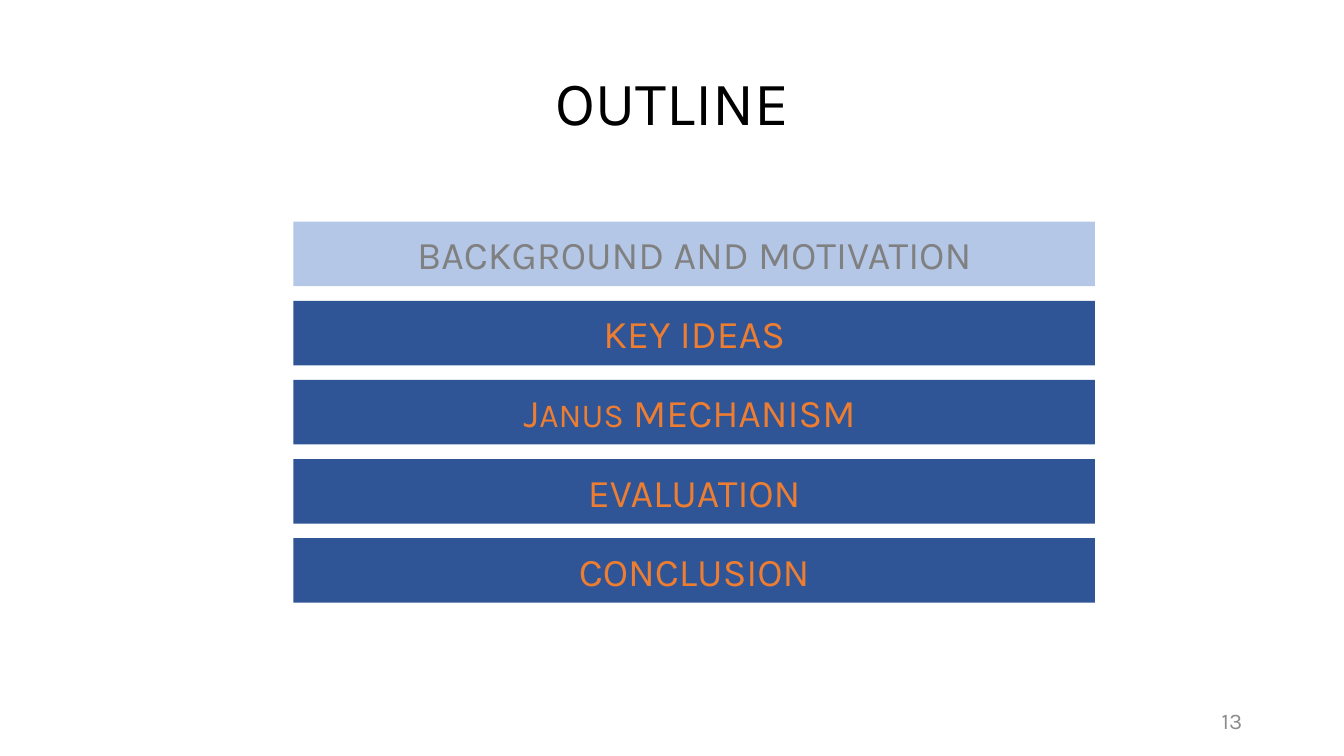
from pptx import Presentation
from pptx.dml.color import RGBColor
from pptx.enum.shapes import MSO_SHAPE
from pptx.enum.text import MSO_ANCHOR, PP_ALIGN
from pptx.util import Inches, Pt

RECTANGLE = MSO_SHAPE.RECTANGLE
MIDDLE = MSO_ANCHOR.MIDDLE
CENTER, RIGHT = PP_ALIGN.CENTER, PP_ALIGN.RIGHT

DONE = ("B4C7E7", "808080")
AHEAD = ("2F5597", "ED7D31")
SECTIONS = [
    ([("BACKGROUND AND MOTIVATION", 28)], DONE),
    ([("KEY IDEAS", 28)], AHEAD),
    ([("J", 28), ("ANUS", 24), (" MECHANISM ", 28)], AHEAD),
    ([("EVALUATION", 28)], AHEAD),
    ([("CONCLUSION", 28)], AHEAD),
]
BAR_TOP, BAR_STEP = 2.2, 0.785


def color(value):
    return RGBColor.from_string(value)


class OutlinePage:
    font = "Karla"

    def __init__(self, deck):
        self.page = deck.slides.add_slide(deck.slide_layouts[6])

    def set_text(self, shape, spans, ink, align):
        frame = shape.text_frame
        frame.word_wrap = True
        frame.vertical_anchor = MIDDLE
        para = frame.paragraphs[0]
        para.alignment = align
        para.font.name = self.font
        para.font.color.rgb = color(ink)
        for text, size in spans:
            span = para.add_run()
            span.text = text
            span.font.size = Pt(size)
        return para

    def label(self, left, top, width, height, text, size, ink, align):
        box = self.page.shapes.add_textbox(
            Inches(left), Inches(top), Inches(width), Inches(height))
        return self.set_text(box, [(text, size)], ink, align)

    def bar(self, top, spans, fill, ink):
        box = self.page.shapes.add_shape(
            RECTANGLE, Inches(2.91), Inches(top), Inches(7.95), Inches(0.64))
        box.shadow.inherit = False
        box.fill.solid()
        box.fill.fore_color.rgb = color(fill)
        box.line.fill.background()
        self.set_text(box, spans, ink, CENTER)


def main():
    deck = Presentation()
    deck.slide_width, deck.slide_height = Inches(13.33), Inches(7.5)
    outline = OutlinePage(deck)
    title = outline.label(0.92, 0.32, 11.5, 1.45, "OUTLINE", 44, "000000", CENTER)
    title.line_spacing = 0.9
    for index, (spans, (fill, ink)) in enumerate(SECTIONS):
        outline.bar(BAR_TOP + index * BAR_STEP, spans, fill, ink)
    outline.label(9.42, 6.95, 3, 0.4, "13", 16, "8C8C8C", RIGHT)
    deck.save("out.pptx")


if __name__ == "__main__":
    main()
